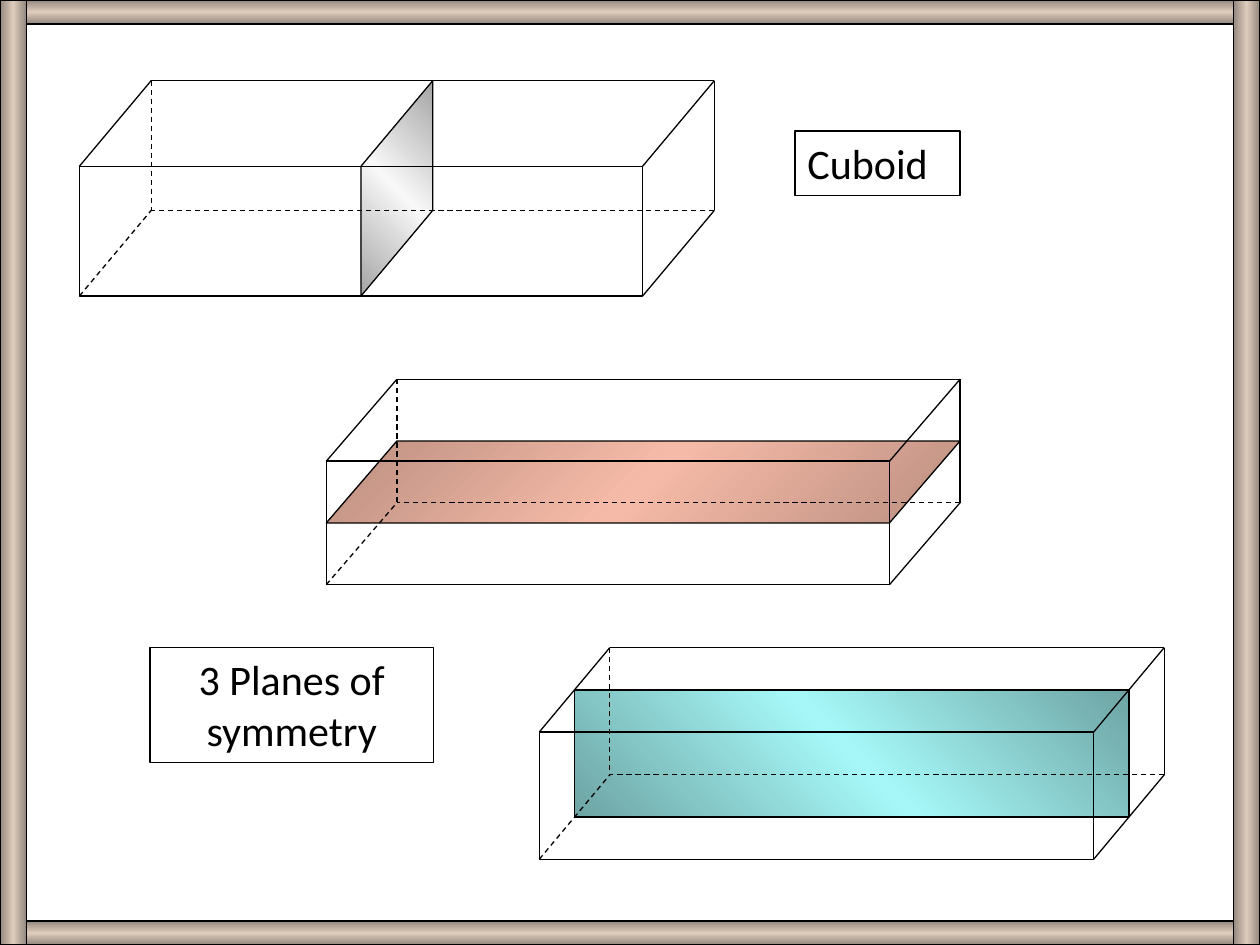
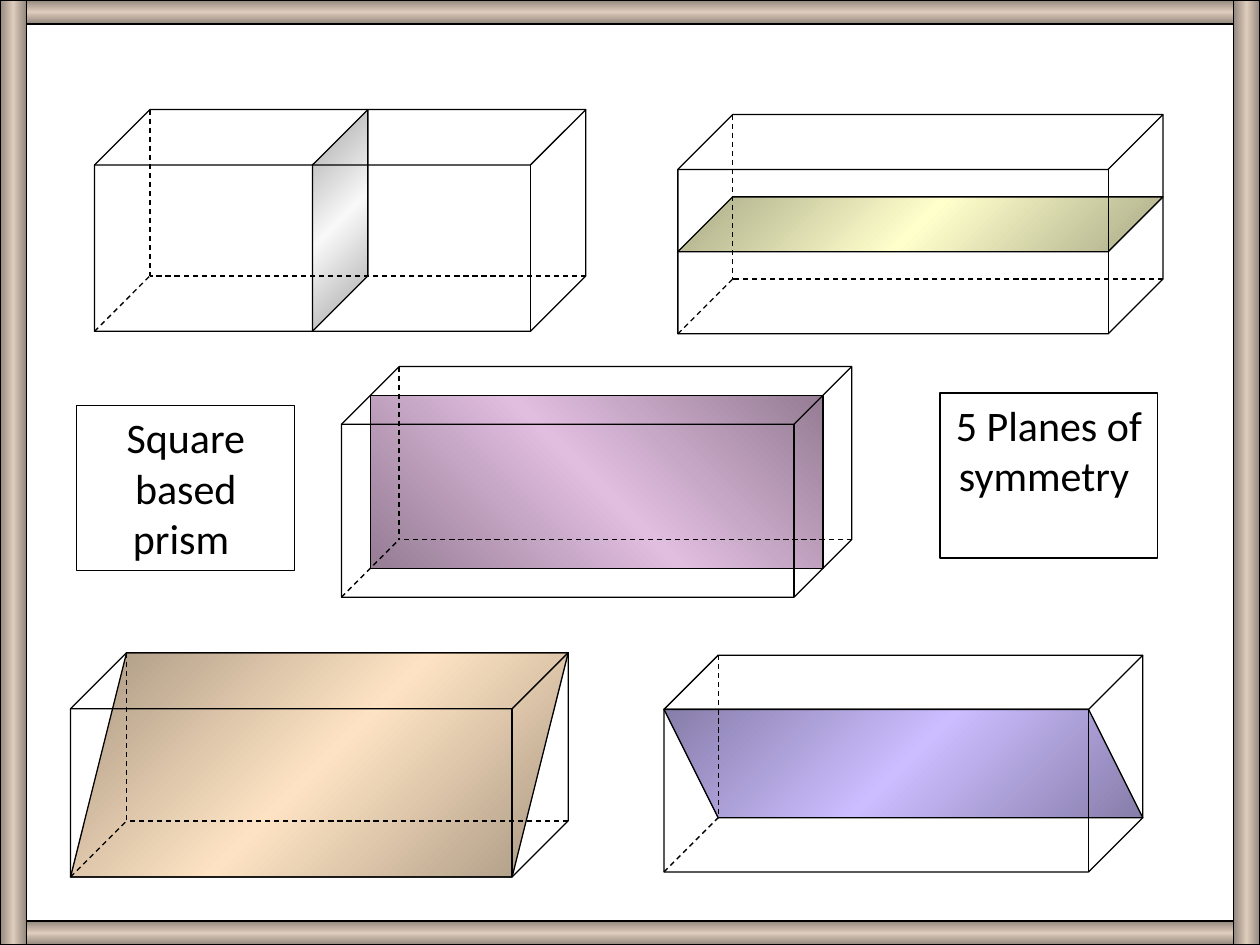
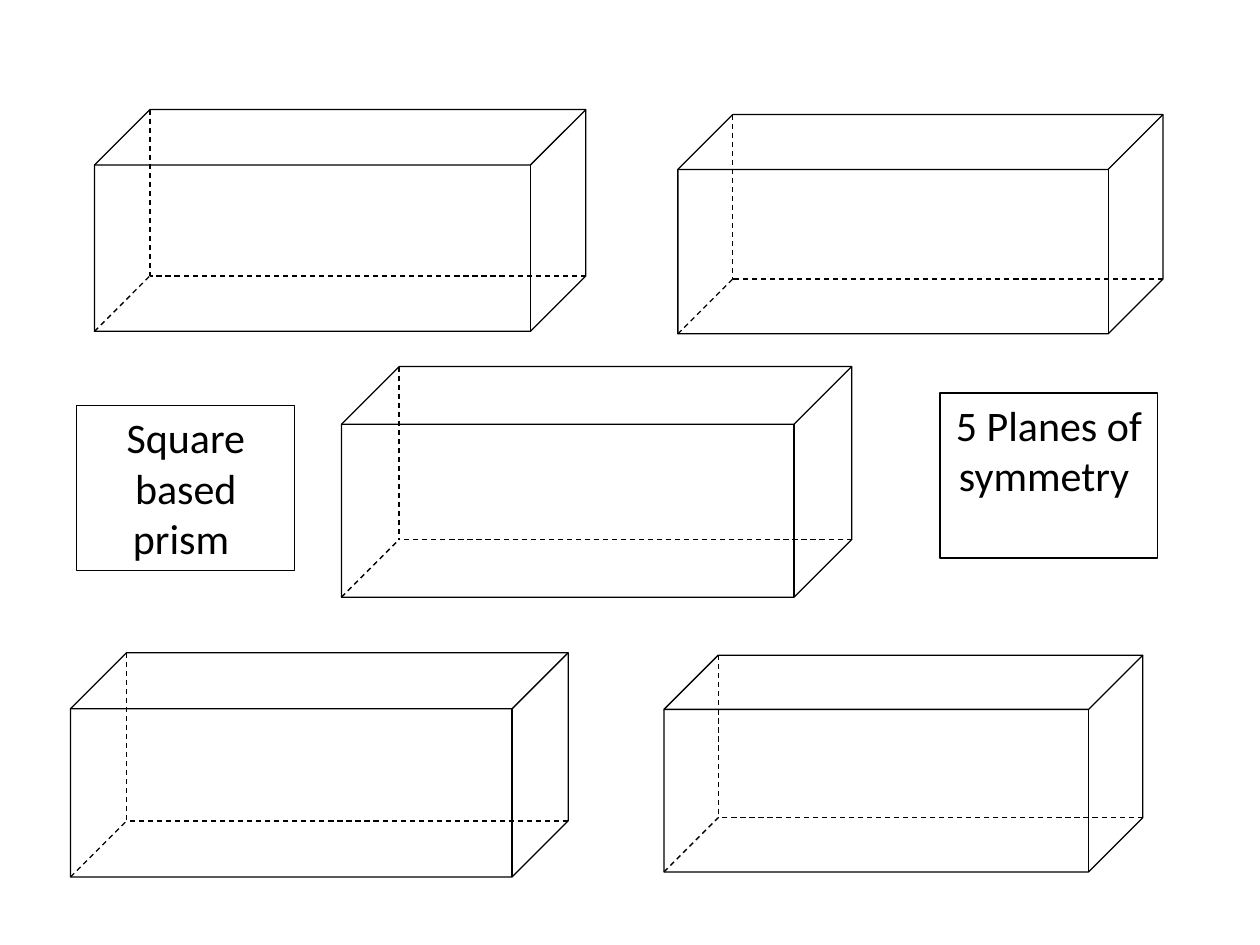
import copy
import dataclasses

import lxml.etree
import pptx
import pptx.dml.color
import pptx.enum.dml
import pptx.enum.shapes
import pptx.enum.text
import pptx.oxml.ns
import pptx.util

Inches = pptx.util.Inches
PRESET = pptx.enum.shapes.MSO_SHAPE
ALIGN = pptx.enum.text.PP_ALIGN
qn = pptx.oxml.ns.qn


@dataclasses.dataclass(frozen=True)
class Theme:
    font: str = "Calibri"
    label_size: float = 24
    line_width: float = 0.75
    ink: str = "000000"
    frame: tuple = ("93877D", "DECCBC")
    grey: tuple = ("A4A4A4", "F8F8F8")
    salmon: tuple = ("BB8E80", "F6BBA8")
    aqua: tuple = ("6EA4A4", "A6F8F8")
    yellow: tuple = ("A9A987", "FFFFCC")
    mauve: tuple = ("957D94", "E1BDE0")
    peach: tuple = ("A89681", "FDE3C3")
    violet: tuple = ("877DA9", "CBBDFF")


THEME = Theme()
SLIDE_W, SLIDE_H = 10, 7.5
RAIL_H, POST_W = 0.19, 0.21
CUBE_DEPTH = 0.25  # share of the shorter side

# Corners inside a solid: across, down and back, each from 0 to 1
CROSSWISE = [(0.5, 0, 0), (0.5, 1, 0), (0.5, 1, 1), (0.5, 0, 1)]
LEVEL = [(0, 0.5, 0), (1, 0.5, 0), (1, 0.5, 1), (0, 0.5, 1)]
LENGTHWISE = [(1, 1, 0.5), (1, 0, 0.5), (0, 0, 0.5), (0, 1, 0.5)]
RISING = [(0, 1, 0), (1, 1, 0), (1, 0, 1), (0, 0, 1)]
FALLING = [(0, 0, 0), (1, 0, 0), (1, 1, 1), (0, 1, 1)]

HIDDEN_EDGES = [((0, 0, 1), (0, 1, 1)), ((1, 1, 1), (0, 1, 1)), ((0, 1, 0), (0, 1, 1))]
VISIBLE_EDGES = [((0, 0, 0), (0, 0, 1)), ((1, 1, 0), (1, 1, 1)), ((1, 0, 0), (1, 0, 1)),
                 ((0, 0, 1), (1, 0, 1)), ((1, 0, 1), (1, 1, 1))]

# Outer box, depth (across, up), plane, colours, gradient angle
CUBOIDS = [
    ((0.63, 0.64, 5.04, 1.71), (0.57, 0.68), CROSSWISE, THEME.grey, 45),
    ((2.59, 3.01, 5.03, 1.63), (0.56, 0.65), LEVEL, THEME.salmon, 315),
    ((4.28, 5.14, 4.96, 1.68), (0.56, 0.67), LENGTHWISE, THEME.aqua, 45),
]
# Outer box, plane, colours, gradient angle
PRISMS = [
    ((0.75, 0.87, 3.9, 1.76), CROSSWISE, THEME.grey, 315),
    ((5.38, 0.91, 3.85, 1.74), LEVEL, THEME.yellow, 315),
    ((2.71, 2.91, 4.05, 1.83), LENGTHWISE, THEME.mauve, 45),
    ((0.56, 5.18, 3.95, 1.78), RISING, THEME.peach, 315),
    ((5.27, 5.2, 3.8, 1.72), FALLING, THEME.violet, 315),
]
CUBOID_LABELS = [
    ("Cuboid", (6.31, 1.04, 1.31, 0.51), ALIGN.LEFT),
    ("3 Planes of symmetry", (1.19, 5.14, 2.25, 0.91), ALIGN.CENTER),
]
PRISM_LABELS = [
    ("5 Planes of symmetry ", (7.46, 3.12, 1.73, 1.31), ALIGN.CENTER),
    ("Square based prism ", (0.61, 3.22, 1.73, 1.31), ALIGN.CENTER),
]


def rgb(code):
    return pptx.dml.color.RGBColor.from_string(code)


def apply(target, formats):
    for name, value in formats.items():
        setattr(target, name, value)


def inches(values):
    return [Inches(value) for value in values]


def ink_line(part):
    part.line.color.rgb = rgb(THEME.ink)
    part.line.width = pptx.util.Pt(THEME.line_width)


def sheen(shape, colours, angle):
    """Fill from dark through light and back to dark."""
    dark, light = colours
    shape.fill.gradient()
    shape.fill.gradient_angle = angle
    stops = shape._element.spPr.find(qn("a:gradFill")).find(qn("a:gsLst"))
    stops.append(copy.deepcopy(stops[0]))
    for stop, place, colour in zip(shape.fill.gradient_stops, (0, 0.5, 1), (dark, light, dark)):
        stop.position = place
        stop.color.rgb = rgb(colour)


def add_outline(slide, preset, box):
    shape = slide.shapes.add_shape(preset, *inches(box))
    shape.shadow.inherit = False
    shape.fill.background()
    ink_line(shape)
    return shape


def add_frame(slide):
    rails = [(0, top, SLIDE_W, RAIL_H) for top in (0, SLIDE_H - RAIL_H)]
    posts = [(left, 0, POST_W, SLIDE_H) for left in (0, SLIDE_W - POST_W)]
    for bars, angle in ((rails, 270), (posts, 0)):
        for bar in bars:
            sheen(add_outline(slide, PRESET.RECTANGLE, bar), THEME.frame, angle)


def corner(box, depth, place):
    """Slide position of a place inside the solid."""
    left, top, width, height = box
    shift, rise = depth
    across, down, back = place
    return inches((left + across * (width - shift) + back * shift,
                   top + (1 - back) * rise + down * (height - rise)))


def add_edges(slide, box, depth, edges, dashed=False):
    for start, end in edges:
        edge = slide.shapes.add_connector(
            pptx.enum.shapes.MSO_CONNECTOR.STRAIGHT,
            *corner(box, depth, start), *corner(box, depth, end))
        ink_line(edge)
        if dashed:
            edge.line.dash_style = pptx.enum.dml.MSO_LINE.DASH
        lxml.etree.SubElement(edge._element.spPr, qn("a:effectLst"))


def add_plane(slide, box, depth, places, colours, angle):
    first, *rest = [corner(box, depth, place) for place in places]
    builder = slide.shapes.build_freeform(*first)
    builder.add_line_segments(rest, close=True)
    plane = builder.convert_to_shape()
    plane.shadow.inherit = False
    sheen(plane, colours, angle)
    ink_line(plane)


def add_cuboid(slide, box, depth):
    left, top, width, height = box
    shift, rise = depth
    add_edges(slide, box, depth, HIDDEN_EDGES, dashed=True)
    add_outline(slide, PRESET.RECTANGLE, (left, top + rise, width - shift, height - rise))
    add_edges(slide, box, depth, VISIBLE_EDGES)


def prism_depth(box):
    return (CUBE_DEPTH * min(box[2:]),) * 2


def add_prism(slide, box):
    add_outline(slide, PRESET.CUBE, box).adjustments[0] = CUBE_DEPTH
    add_edges(slide, box, prism_depth(box), HIDDEN_EDGES, dashed=True)


def add_labels(slide, labels):
    for words, box, alignment in labels:
        label = slide.shapes.add_textbox(*inches(box))
        ink_line(label)
        apply(label.text_frame, {
            "word_wrap": True,
            "auto_size": pptx.enum.text.MSO_AUTO_SIZE.NONE,
            "vertical_anchor": pptx.enum.text.MSO_ANCHOR.TOP,
        })
        paragraph = label.text_frame.paragraphs[0]
        paragraph.alignment = alignment
        run = paragraph.add_run()
        run.text = words
        apply(run.font, {"name": THEME.font, "size": pptx.util.Pt(THEME.label_size)})
        run.font.color.rgb = rgb(THEME.ink)


def main():
    deck = pptx.Presentation()
    apply(deck, {"slide_width": Inches(SLIDE_W), "slide_height": Inches(SLIDE_H)})
    cuboid_slide, prism_slide, worksheet = [
        deck.slides.add_slide(deck.slide_layouts[6]) for _ in range(3)]

    add_frame(cuboid_slide)
    for box, depth, *plane in CUBOIDS:
        add_plane(cuboid_slide, box, depth, *plane)
        add_cuboid(cuboid_slide, box, depth)
    add_labels(cuboid_slide, CUBOID_LABELS)

    add_frame(prism_slide)
    for box, *plane in PRISMS:
        add_plane(prism_slide, box, prism_depth(box), *plane)
        add_prism(prism_slide, box)
        add_prism(worksheet, box)
    for slide in (prism_slide, worksheet):
        add_labels(slide, PRISM_LABELS)

    deck.save("out.pptx")


if __name__ == "__main__":
    main()
